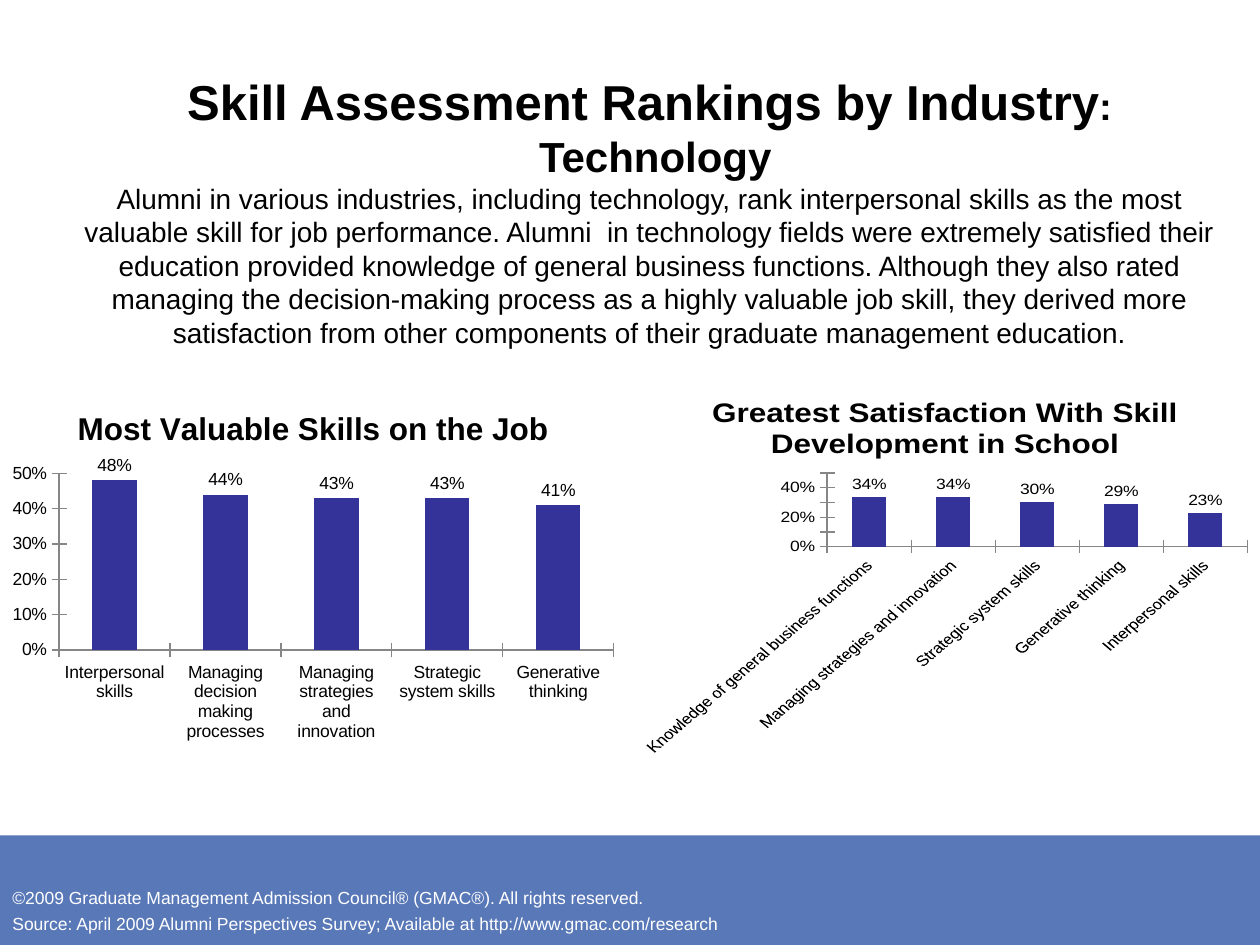
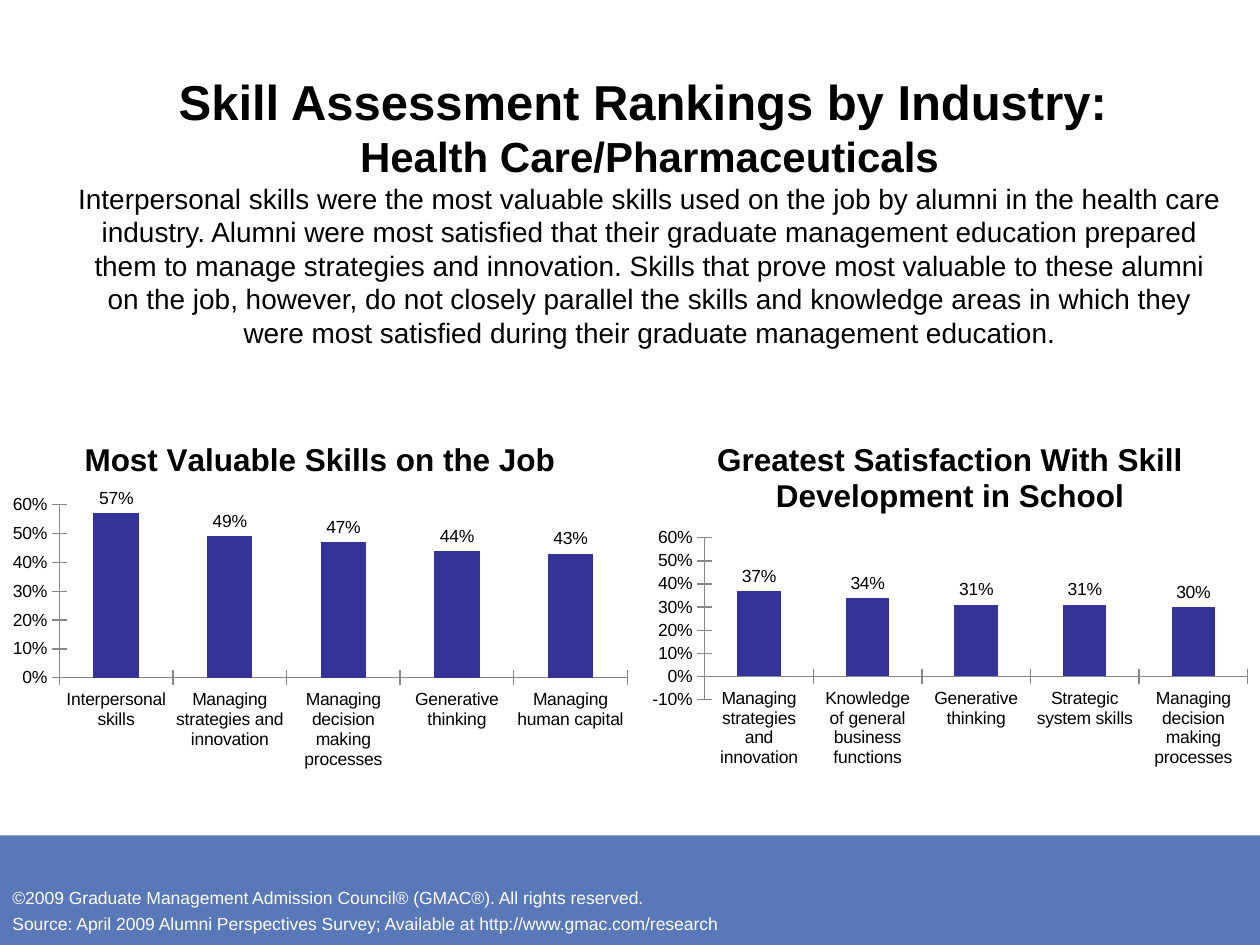
"""Build two slides of skill rankings by industry."""
from pptx import Presentation
from pptx.chart.data import CategoryChartData
from pptx.dml.color import RGBColor
from pptx.enum.chart import XL_CHART_TYPE, XL_LABEL_POSITION, XL_TICK_MARK
from pptx.enum.shapes import MSO_SHAPE
from pptx.enum.text import MSO_ANCHOR, MSO_AUTO_SIZE, PP_ALIGN
from pptx.util import Inches, Pt

COLUMNS = XL_CHART_TYPE.COLUMN_CLUSTERED
OUTSIDE_END = XL_LABEL_POSITION.OUTSIDE_END
CROSS = XL_TICK_MARK.CROSS
RECTANGLE = MSO_SHAPE.RECTANGLE
MIDDLE = MSO_ANCHOR.MIDDLE
NO_FIT = MSO_AUTO_SIZE.NONE
CENTER = PP_ALIGN.CENTER

FONT = "Arial"
BLACK, WHITE, BAND_BLUE, BAR_BLUE, AXIS_GRAY = "000000", "FFFFFF", "5978B8", "333399", "868686"
PERCENT = "###0%"
TITLE_ONLY = 5
TITLE_BOX = (0.52, 0.51, 9.27, 2.32)
BAND_BOX = (0, 6.63, 10, 0.87)
CREDIT_BOX = (0, 6.99, 5.88, 0.47)

HEADING = "Skill Assessment Rankings by Industry"
JOB_TITLE = "Most Valuable Skills on the Job"
SCHOOL_TITLE = "Greatest Satisfaction With Skill Development in School"
CREDITS = (
    "©2009 Graduate Management Admission Council® (GMAC®). All rights reserved.",
    "Source: April 2009 Alumni Perspectives Survey; Available at http://www.gmac.com/research",
)

INTERPERSONAL = "Interpersonal skills"
DECISIONS = "Managing decision making processes"
STRATEGIES = "Managing strategies and innovation"
SYSTEMS = "Strategic system skills"
GENERATIVE = "Generative thinking"
BUSINESS = "Knowledge of general business functions"
HUMAN_CAPITAL = "Managing human capital"

INDUSTRIES = (
    {
        "heading": (
            ((HEADING, 28, True), (":", 22, True)),
            ((" Technology", 24, True),),
            (("Alumni in various industries, including technology, rank interpersonal skills as "
              "the most valuable skill for job performance. Alumni  in technology fields were "
              "extremely satisfied their education provided knowledge of general business "
              "functions. Although they also rated managing the decision-making process as a "
              "highly valuable job skill, they derived more satisfaction from other components "
              "of their graduate management education.", 16, False),),
        ),
        "charts": (
            {"box": (0, 3.08, 4.97, 2.86), "title": JOB_TITLE,
             "skills": {INTERPERSONAL: 0.48, DECISIONS: 0.44, STRATEGIES: 0.43,
                        SYSTEMS: 0.43, GENERATIVE: 0.41},
             "low": 0, "high": 0.5},
            {"box": (5, 3, 5, 3), "title": SCHOOL_TITLE,
             "skills": {BUSINESS: 0.34, STRATEGIES: 0.34, SYSTEMS: 0.3,
                        GENERATIVE: 0.29, INTERPERSONAL: 0.23},
             "low": 0, "high": 0.5, "label_turn": -45},
        ),
    },
    {
        "heading": (
            ((HEADING + ": ", 28, True),),
            (("Health Care/Pharmaceuticals", 24, True),),
            (("Interpersonal skills were the most valuable skills used on the job by alumni in "
              "the health care industry. Alumni were most satisfied that their graduate "
              "management education prepared them to manage strategies and innovation. Skills "
              "that prove most valuable to these alumni on the job, however, do not closely "
              "parallel the skills and knowledge areas in which they were most satisfied during "
              "their graduate management education.", 16, False),),
        ),
        "charts": (
            {"box": (0, 3.33, 5.08, 2.83), "title": JOB_TITLE,
             "skills": {INTERPERSONAL: 0.57, STRATEGIES: 0.49, DECISIONS: 0.47,
                        GENERATIVE: 0.44, HUMAN_CAPITAL: 0.43},
             "low": 0, "high": 0.6},
            {"box": (5.08, 3.33, 4.92, 2.83), "title": SCHOOL_TITLE,
             "skills": {STRATEGIES: 0.37, BUSINESS: 0.34, GENERATIVE: 0.31,
                        SYSTEMS: 0.31, DECISIONS: 0.3},
             "low": -0.1, "high": 0.6},
        ),
    },
)


def color(hex_text):
    """Return the colour for a hex string."""
    return RGBColor.from_string(hex_text)


def inches(box):
    """Return the box as lengths."""
    return [Inches(side) for side in box]


def format_font(font, size, fill=BLACK, bold=False):
    """Set the shared typeface with a size, colour and weight."""
    font.name, font.size, font.bold = FONT, Pt(size), bold
    font.color.rgb = color(fill)


def add_text(para, text, **style):
    """Add a formatted span of text to a paragraph."""
    span = para.add_run()
    span.text = text
    format_font(span.font, **style)


def add_footer(page, layout):
    """Draw the band and credits and move them to the layout that all pages share."""
    band = page.shapes.add_shape(RECTANGLE, *inches(BAND_BOX))
    band.shadow.inherit = False
    band.fill.solid()
    band.fill.fore_color.rgb = color(BAND_BLUE)
    band.line.fill.background()
    credit_box = page.shapes.add_textbox(*inches(CREDIT_BOX))
    frame = credit_box.text_frame
    frame.word_wrap = False
    for index, credit in enumerate(CREDITS):
        para = frame.add_paragraph() if index else frame.paragraphs[0]
        para.space_before = Pt(3 if index else 0)
        add_text(para, credit, size=10, fill=WHITE)
    for shape in (band, credit_box):
        layout.shapes.element.append(shape.element)


def fill_title(page, lines, box):
    """Place the title and write its lines in one centred paragraph."""
    title = page.shapes.title
    title.left, title.top, title.width, title.height = inches(box)
    frame = title.text_frame
    frame.word_wrap, frame.auto_size, frame.vertical_anchor = True, NO_FIT, MIDDLE
    para = frame.paragraphs[0]
    para.alignment = CENTER
    for index, line in enumerate(lines):
        if index:
            para.add_line_break()
        for text, size, bold in line:
            add_text(para, text, size=size, bold=bold)


def add_skill_chart(page, box, title, skills, low, high, label_turn=None):
    """Add a column chart of the share of alumni naming each skill."""
    data = CategoryChartData(number_format=PERCENT)
    data.categories = list(skills)
    data.add_series("Series 1", list(skills.values()))
    chart = page.shapes.add_chart(COLUMNS, *inches(box), data).chart
    format_font(chart.font, 10)
    chart.has_legend = False
    chart.has_title = True
    add_text(chart.chart_title.text_frame.paragraphs[0], title, size=18, bold=True)
    chart.chart_title.include_in_layout = False

    for axis in (chart.category_axis, chart.value_axis):
        axis.major_tick_mark = CROSS
        axis.has_major_gridlines = False
        axis.format.line.color.rgb = color(AXIS_GRAY)
        format_font(axis.tick_labels.font, 10)
    if label_turn is not None:
        text_body = chart.category_axis.tick_labels.font._element.getparent().getparent().getparent()
        text_body.bodyPr.set("rot", str(label_turn * 60000))
    scale = chart.value_axis
    scale.minimum_scale, scale.maximum_scale, scale.major_unit = low, high, 0.1
    scale.tick_labels.number_format = PERCENT
    scale.tick_labels.number_format_is_linked = False

    plot = chart.plots[0]
    plot.vary_by_categories = False
    plot.gap_width = 150
    bars = plot.series[0].format
    bars.fill.solid()
    bars.fill.fore_color.rgb = color(BAR_BLUE)
    plot.has_data_labels = True
    labels = plot.data_labels
    labels.show_value = True
    labels.position = OUTSIDE_END
    labels.number_format, labels.number_format_is_linked = PERCENT, False
    format_font(labels.font, 10)


def add_industry_page(deck, layout, industry):
    """Add a page with an industry's heading and its charts."""
    page = deck.slides.add_slide(layout)
    fill_title(page, industry["heading"], TITLE_BOX)
    for chart in industry["charts"]:
        add_skill_chart(page, **chart)
    return page


def main():
    """Build and save the deck."""
    deck = Presentation()
    deck.slide_width, deck.slide_height = Inches(10), Inches(7.5)
    layout = deck.slide_layouts[TITLE_ONLY]
    pages = [add_industry_page(deck, layout, industry) for industry in INDUSTRIES]
    add_footer(pages[0], layout)
    deck.save("out.pptx")


if __name__ == "__main__":
    main()
